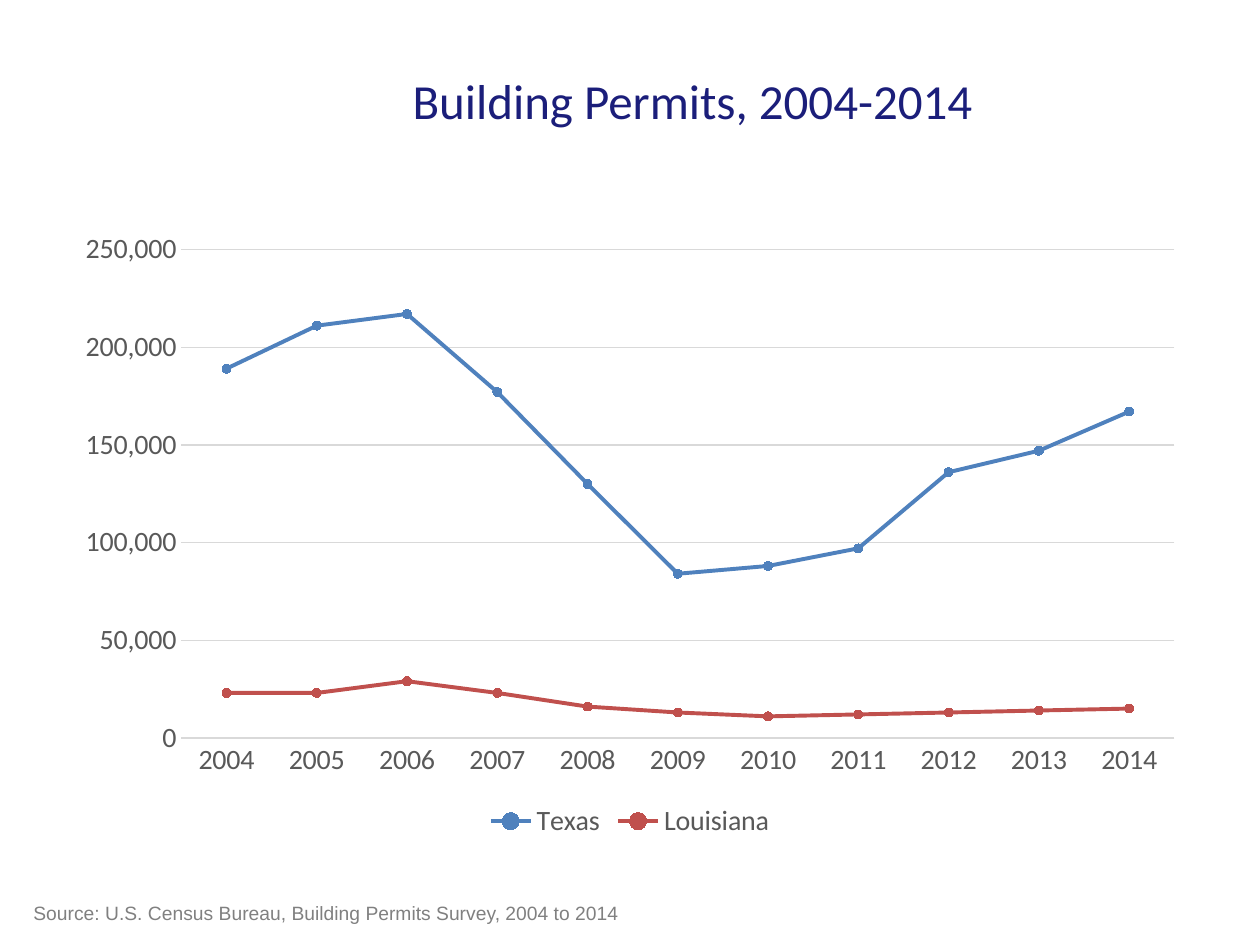
from dataclasses import dataclass

from pptx import Presentation
from pptx.chart.data import CategoryChartData
from pptx.dml.color import RGBColor
from pptx.enum.chart import XL_CHART_TYPE, XL_LEGEND_POSITION, XL_MARKER_STYLE, XL_TICK_MARK
from pptx.enum.text import MSO_ANCHOR, PP_ALIGN
from pptx.util import Emu, Pt

LINE_MARKERS = XL_CHART_TYPE.LINE_MARKERS
BOTTOM = XL_LEGEND_POSITION.BOTTOM
CIRCLE = XL_MARKER_STYLE.CIRCLE
NO_TICK = XL_TICK_MARK.NONE
MIDDLE = MSO_ANCHOR.MIDDLE
LEFT, CENTER = PP_ALIGN.LEFT, PP_ALIGN.CENTER


@dataclass(frozen=True)
class Theme:
    title: RGBColor = RGBColor(0x1B, 0x1E, 0x7A)
    label: RGBColor = RGBColor(0x59, 0x59, 0x59)
    grid: RGBColor = RGBColor(0xD9, 0xD9, 0xD9)
    source: RGBColor = RGBColor(0x80, 0x80, 0x80)
    texas: RGBColor = RGBColor(0x4F, 0x81, 0xBD)
    louisiana: RGBColor = RGBColor(0xC0, 0x50, 0x4D)
    font: str = "Calibri"
    source_font: str = "Arial"
    title_size: int = 28
    label_size: int = 16
    source_size: int = 11


THEME = Theme()


def px(n):
    """Convert pixels, 126 to the inch, to EMU."""
    return Emu(round(n * 914400 / 126))


def add_text(s, box, text, font, size, color, align, wrap):
    tf = s.shapes.add_textbox(*map(px, box)).text_frame
    tf.word_wrap = wrap
    tf.vertical_anchor = MIDDLE
    p = tf.paragraphs[0]
    p.alignment = align
    r = p.add_run()
    r.text = text
    r.font.name, r.font.size = font, Pt(size)
    r.font.color.rgb = color


prs = Presentation()
prs.slide_width, prs.slide_height = px(1260), px(945)
s = prs.slides.add_slide(prs.slide_layouts[6])

add_text(s, (220, 32, 945, 136), "Building Permits, 2004-2014",
         THEME.font, THEME.title_size, THEME.title, CENTER, True)

# Annual permits by state
permits = [
    ("Texas", THEME.texas, [189000, 211000, 217000, 177000, 130000, 84000,
                            88000, 97000, 136000, 147000, 167000]),
    ("Louisiana", THEME.louisiana, [23000, 23000, 29000, 23000, 16000, 13000,
                                    11000, 12000, 13000, 14000, 15000]),
]
data = CategoryChartData(number_format="#,##0")
data.categories = [str(year) for year in range(2004, 2015)]
for state, _, values in permits:
    data.add_series(state, values)

chart = s.shapes.add_chart(LINE_MARKERS, *map(px, (63, 220, 1134, 624)), data).chart
chart.has_title = False
chart.font.name, chart.font.size = THEME.font, Pt(THEME.label_size)
chart.font.color.rgb = THEME.label
chart.has_legend = True
chart.legend.position = BOTTOM
chart.legend.include_in_layout = False

plot = chart.plots[0]
plot.vary_by_categories = False
for series, (_, color, _) in zip(plot.series, permits):
    series.smooth = False
    series.format.line.color.rgb = color
    series.format.line.width = Pt(2.25)
    marker = series.marker
    marker.style, marker.size = CIRCLE, 5
    marker.format.fill.solid()
    marker.format.fill.fore_color.rgb = color
    marker.format.line.color.rgb = color

years, counts = chart.category_axis, chart.value_axis
for axis in (years, counts):
    axis.major_tick_mark = axis.minor_tick_mark = NO_TICK
counts.minimum_scale, counts.maximum_scale, counts.major_unit = 0, 250000, 50000
counts.has_major_gridlines = True
counts.format.line.fill.background()
counts.tick_labels.number_format = "#,##0"
counts.tick_labels.number_format_is_linked = False
for line in (years.format.line, counts.major_gridlines.format.line):
    line.color.rgb = THEME.grid
    line.width = Pt(0.75)

add_text(s, (21, 895, 616, 36),
         "Source: U.S. Census Bureau, Building Permits Survey, 2004 to 2014",
         THEME.source_font, THEME.source_size, THEME.source, LEFT, False)

prs.save("out.pptx")
